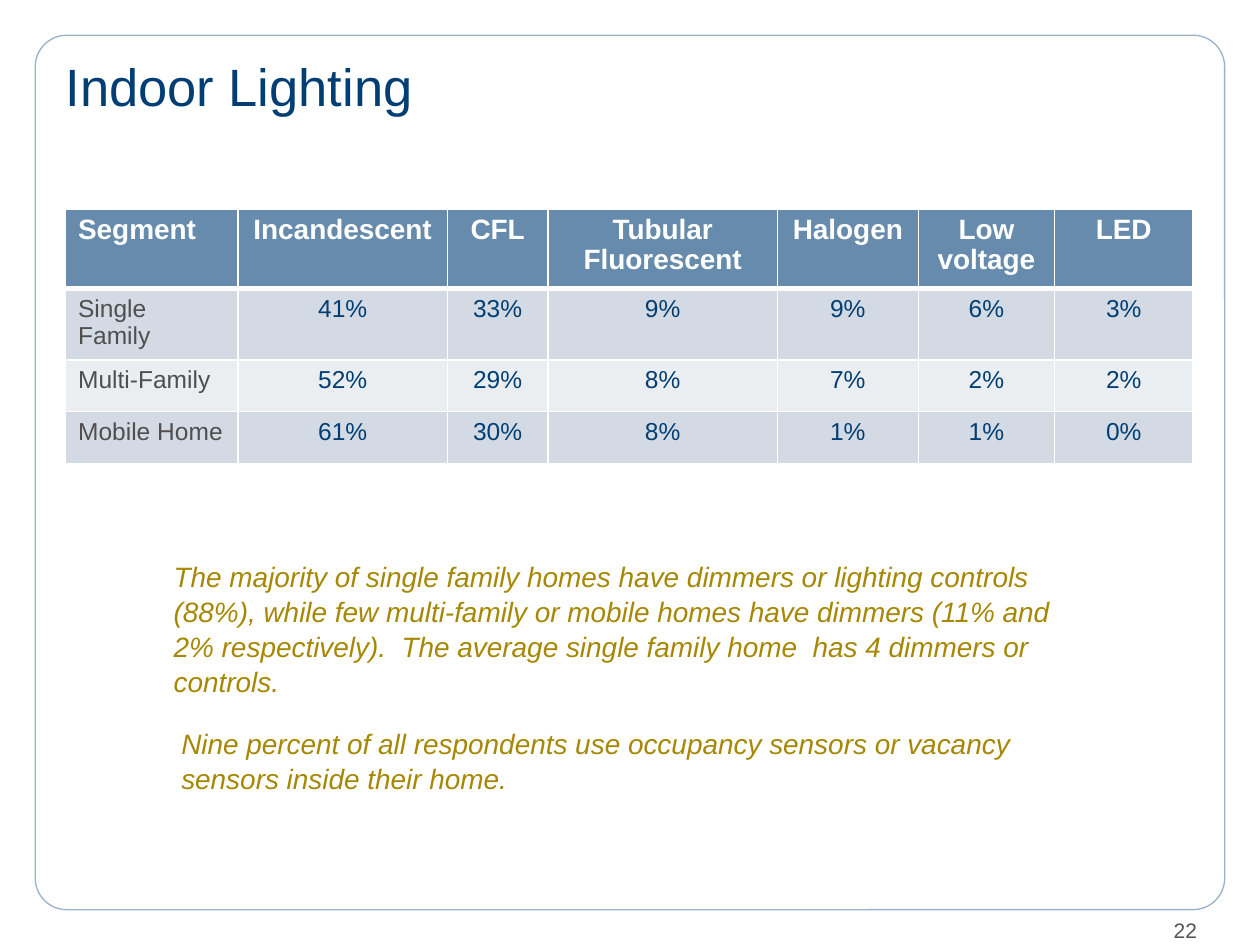
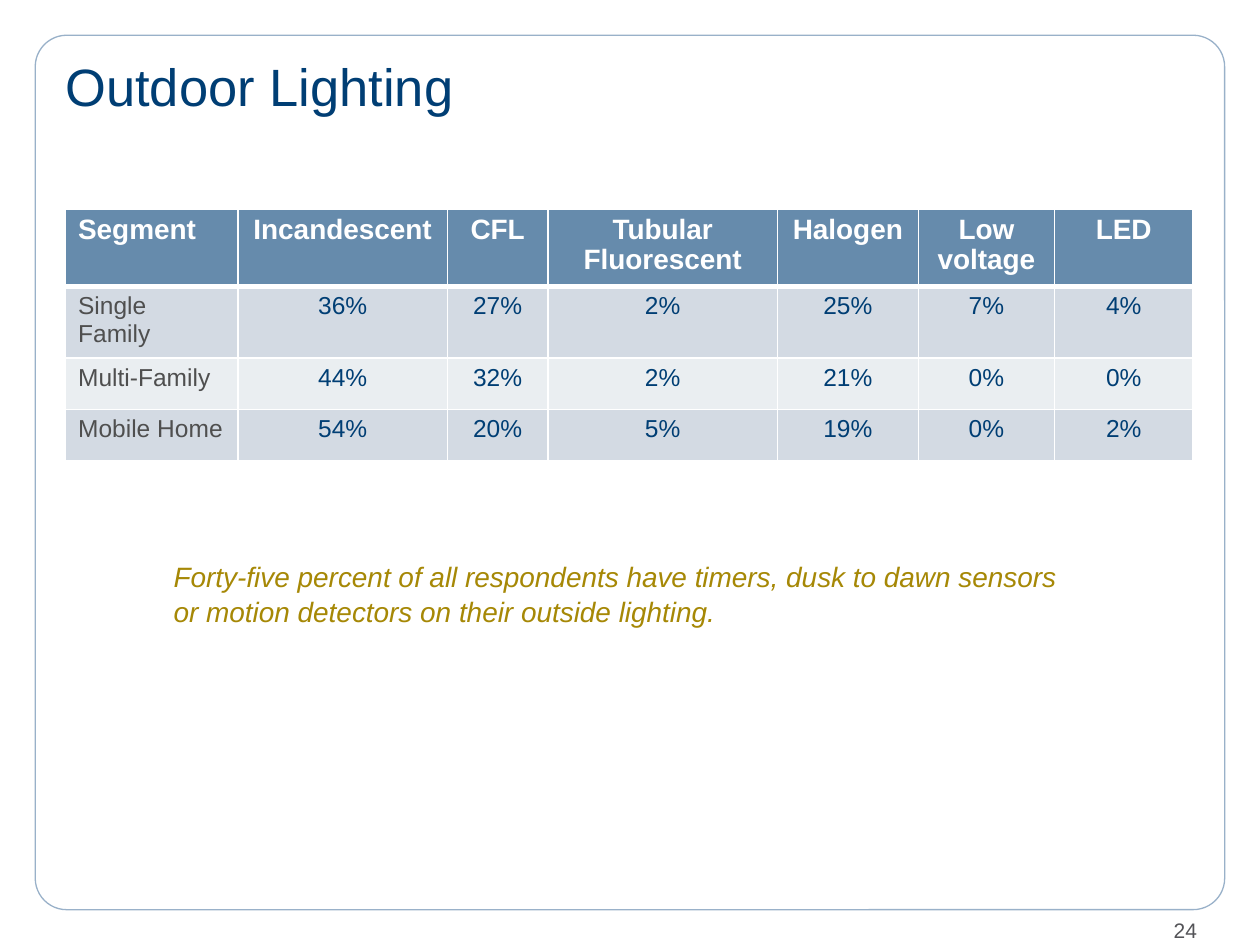
from lxml import etree
from pptx import Presentation
from pptx.dml.color import RGBColor
from pptx.enum import shapes, text
from pptx.oxml.ns import qn
from pptx.util import Inches, Pt

# Content
HEADINGS = ["Segment", "Incandescent", "CFL", "Tubular Fluorescent",
            "Halogen", "Low voltage", "LED"]
SEGMENTS = ["Single Family", "Multi-Family", "Mobile Home"]
PAGES = [
    {
        "title": "Indoor Lighting",
        "number": "22",
        "header_height": 0.63,
        "shares": [(41, 33, 9, 9, 6, 3), (52, 29, 8, 7, 2, 2), (61, 30, 8, 1, 1, 0)],
        "notes": [
            (1.28, 4.38, 1.18,
             "The majority of single family homes have dimmers or lighting controls "
             "(88%), while few multi-family or mobile homes have dimmers (11% and 2% "
             "respectively).  The average single family home  has 4 dimmers or controls."),
            (1.34, 5.71, 0.64,
             "Nine percent of all respondents use occupancy sensors or vacancy "
             "sensors inside their home."),
        ],
    },
    {
        "title": "Outdoor Lighting",
        "number": "24",
        "header_height": 0.59,
        "shares": [(36, 27, 2, 25, 7, 4), (44, 32, 2, 21, 0, 0), (54, 20, 5, 19, 0, 2)],
        "notes": [
            (1.28, 4.38, 0.64,
             "Forty-five percent of all respondents have timers, dusk to dawn sensors "
             "or motion detectors on their outside lighting."),
        ],
    },
]

# Shared look
WHITE = RGBColor(0xFF, 0xFF, 0xFF)
NAVY = RGBColor(0x00, 0x3E, 0x74)
GOLD = RGBColor(0xA6, 0x88, 0x06)
GREY = RGBColor(0x4F, 0x4F, 0x4F)
NUMBER_GREY = RGBColor(0x54, 0x54, 0x58)
FRAME_BLUE = RGBColor(0x99, 0xB1, 0xC9)
HEADER_BLUE = RGBColor(0x66, 0x8B, 0xAC)
BANDS = [RGBColor(0xD3, 0xDA, 0xE3), RGBColor(0xEA, 0xEE, 0xF1)]

TITLE = {"size": Pt(30), "color": NAVY}
NUMBER = {"size": Pt(12), "color": NUMBER_GREY}
NOTE = {"size": Pt(16), "color": GOLD, "italic": True}
HEADER = {"size": Pt(16), "color": WHITE, "bold": True}
SEGMENT = {"size": Pt(14), "color": GREY, "bold": False}
SHARE = {"size": Pt(14), "color": NAVY, "bold": False}

LEFT, CENTER, RIGHT = (text.PP_ALIGN.LEFT, text.PP_ALIGN.CENTER, text.PP_ALIGN.RIGHT)
COLUMN_WIDTHS = [1.37, 1.66, 0.8, 1.82, 1.12, 1.08, 1.1]
TABLE_LEFT, TABLE_TOP, ROW_HEIGHT = 0.52, 1.66, 0.41


def write(frame, words, look, align=LEFT, spacing=None):
    para = frame.paragraphs[0]
    para.alignment = align
    para.line_spacing = spacing
    span = para.add_run()
    span.text = words
    span.font.name = "Arial"
    for name, value in look.items():
        if name == "color":
            span.font.color.rgb = value
        else:
            setattr(span.font, name, value)


def add_text(page, place, words, look, align=LEFT, spacing=None, flush=False):
    box = page.shapes.add_textbox(*map(Inches, place))
    frame = box.text_frame
    frame.word_wrap = True
    if flush:
        frame.vertical_anchor = text.MSO_ANCHOR.MIDDLE
        for side in ("left", "top", "right", "bottom"):
            setattr(frame, f"margin_{side}", 0)
    write(frame, words, look, align, spacing)


def add_borders(cell, row):
    # The rule between header and body is thicker
    widths = {"L": 1, "R": 1, "T": 3 if row == 1 else 1, "B": 3 if row == 0 else 1}
    properties = cell._tc.get_or_add_tcPr()
    for side, width in widths.items():
        line = etree.SubElement(properties, qn(f"a:ln{side}"), w=str(Pt(width)))
        fill = etree.SubElement(line, qn("a:solidFill"))
        etree.SubElement(fill, qn("a:srgbClr"), val=str(WHITE))


def add_lighting_table(page, shares, header_height):
    rows = [HEADINGS] + [[segment] + [f"{share}%" for share in values]
                         for segment, values in zip(SEGMENTS, shares)]
    heights = [header_height] + [ROW_HEIGHT] * len(SEGMENTS)
    table = page.shapes.add_table(
        len(rows), len(HEADINGS), Inches(TABLE_LEFT), Inches(TABLE_TOP),
        Inches(sum(COLUMN_WIDTHS)), Inches(sum(heights))).table
    for column, width in zip(table.columns, COLUMN_WIDTHS):
        column.width = Inches(width)
    for r, (words, height) in enumerate(zip(rows, heights)):
        table.rows[r].height = Inches(height)
        for c, word in enumerate(words):
            cell = table.cell(r, c)
            add_borders(cell, r)
            cell.fill.solid()
            cell.fill.fore_color.rgb = BANDS[(r - 1) % 2] if r else HEADER_BLUE
            look = HEADER if r == 0 else SHARE if c else SEGMENT
            write(cell.text_frame, word, look, CENTER if c else LEFT,
                  None if r else 0.96)


def add_frame(page):
    frame = page.shapes.add_shape(shapes.MSO_SHAPE.ROUNDED_RECTANGLE,
                                  *map(Inches, (0.28, 0.28, 9.44, 6.94)))
    frame.adjustments[0] = 0.036
    frame.shadow.inherit = False
    frame.fill.background()
    frame.line.color.rgb = FRAME_BLUE
    frame.line.width = Pt(0.75)


def main():
    deck = Presentation()
    deck.slide_width, deck.slide_height = Inches(10), Inches(7.5)
    for content in PAGES:
        page = deck.slides.add_slide(deck.slide_layouts[6])
        # Frame, page number and title
        add_frame(page)
        add_text(page, (8.1, 7.27, 1.4, 0.23), content["number"], NUMBER, RIGHT, flush=True)
        add_text(page, (0.52, 0.4, 8.86, 0.55), content["title"], TITLE, flush=True)
        # Table and findings
        add_lighting_table(page, content["shares"], content["header_height"])
        for left, top, height, words in content["notes"]:
            add_text(page, (left, top, 7.32, height), words, NOTE, spacing=1.04)
    deck.save("out.pptx")


if __name__ == "__main__":
    main()
